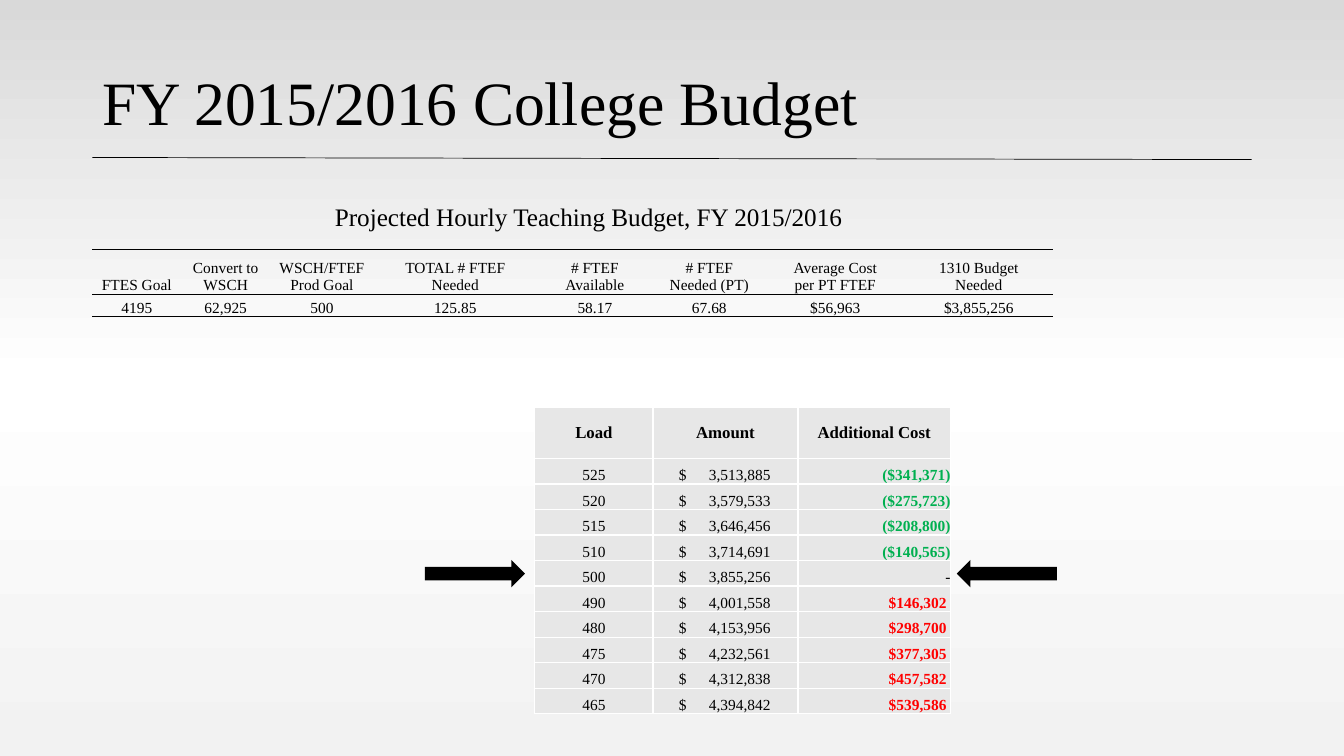
from lxml import etree
from pptx import Presentation
from pptx.dml.color import RGBColor
from pptx.enum.shapes import MSO_CONNECTOR, MSO_SHAPE
from pptx.enum.text import MSO_ANCHOR as ANCHOR, PP_ALIGN as ALIGN
from pptx.oxml.ns import qn
from pptx.util import Pt

FONT = "Times New Roman"
COLORS = {"ink": "000000", "cell": "E7E7E7", "grid": "FFFFFF",
          "saving": "00B050", "increase": "FF0000"}
BACKGROUND_STOPS = {0: "D9D9D9", 50: "FFFFFF", 100: "F2F2F2"}
NO_STYLE = "{2D5ABB26-0587-4C30-8999-92F81FD0307C}"

PROJECTION = {
    "FTES Goal": "4195", "Convert to WSCH": "62,925", "WSCH/FTEF\nProd Goal": "500",
    "TOTAL # FTEF\nNeeded": "125.85", "# FTEF\nAvailable": "58.17",
    "# FTEF\nNeeded (PT)": "67.68", "Average Cost\nper PT FTEF": "$56,963",
    "1310 Budget\nNeeded": "$3,855,256"}
PROJECTION_WIDTHS = [63.5, 63.5, 74, 116.5, 83, 80.5, 99.5, 105.5]

BASE_LOAD = 500
AMOUNTS = {525: 3513885, 520: 3579533, 515: 3646456, 510: 3714691, 500: 3855256,
           490: 4001558, 480: 4153956, 475: 4232561, 470: 4312838, 465: 4394842}
LOAD_HEADINGS = ["Load", "Amount", "Additional Cost"]
LOAD_WIDTHS = [84.5, 103.5, 109]
DOLLAR_INDENT, AMOUNT_TAB = 18.5, 65.5


def rgb(name):
    return RGBColor.from_string(COLORS[name])


def write(frame, text, size, align=ALIGN.CENTER, color="ink", bold=False):
    frame.text = text
    for paragraph in frame.paragraphs:
        paragraph.alignment = align
        for run in paragraph.runs:
            run.font.color.rgb = rgb(color)
            for name, value in {"name": FONT, "size": Pt(size), "bold": bold}.items():
                setattr(run.font, name, value)


def add_borders(cell, sides, color):
    properties = cell._tc.get_or_add_tcPr()
    for side in sides:
        line = etree.SubElement(properties, qn(f"a:ln{side}"), w=str(Pt(1)))
        fill = etree.SubElement(line, qn("a:solidFill"))
        etree.SubElement(fill, qn("a:srgbClr"), val=COLORS[color])


def add_plain_table(slide, left, top, widths, heights):
    """Add a table without style, cell margins or fills."""
    frame = slide.shapes.add_table(len(heights), len(widths), Pt(left), Pt(top),
                                   Pt(sum(widths)), Pt(sum(heights)))
    table = frame.table
    next(frame.element.iter(qn("a:tableStyleId"))).text = NO_STYLE
    table.first_row = table.horz_banding = False
    for column, width in zip(table.columns, widths):
        column.width = Pt(width)
    for row, height in zip(table.rows, heights):
        row.height = Pt(height)
    for cell in table.iter_cells():
        cell.vertical_anchor = ANCHOR.BOTTOM
        for side in ("left", "right", "top", "bottom"):
            setattr(cell, f"margin_{side}", 0)
    return table


def paint_background(slide):
    fill = slide.background.fill
    fill.gradient()
    fill.gradient_angle = 270
    stops = next(slide.element.iter(qn("a:gsLst")))
    for stop in list(stops):
        stops.remove(stop)
    for percent, color in BACKGROUND_STOPS.items():
        stop = etree.SubElement(stops, qn("a:gs"), pos=str(percent * 1000))
        etree.SubElement(stop, qn("a:srgbClr"), val=color)


def add_heading(slide, left, top, width, height):
    title = slide.shapes.title
    box = {"left": left, "top": top, "width": width, "height": height}
    for name, value in box.items():
        setattr(title, name, Pt(value))
    write(title.text_frame, "FY 2015/2016 College Budget", 44, ALIGN.LEFT)
    title.text_frame.vertical_anchor = ANCHOR.MIDDLE
    title.text_frame.paragraphs[0].line_spacing = 0.9

    rule_top = top + 83.5
    rule = slide.shapes.add_connector(MSO_CONNECTOR.STRAIGHT, Pt(left), Pt(rule_top),
                                      Pt(left + width), Pt(rule_top + 1.5))
    rule.line.color.rgb = rgb("ink")
    rule.line.width = Pt(0.5)
    etree.SubElement(rule.element.spPr, qn("a:effectLst"))


def add_projection(slide, left, top):
    caption = slide.shapes.add_textbox(Pt(left + 74), Pt(top), Pt(561), Pt(29))
    caption.text_frame.word_wrap = True
    write(caption.text_frame, "Projected Hourly Teaching Budget, FY 2015/2016", 18)

    table = add_plain_table(slide, left, top + 37.5, PROJECTION_WIDTHS, [32.2, 16])
    for column, texts in enumerate(PROJECTION.items()):
        for row, text in enumerate(texts):
            cell = table.cell(row, column)
            write(cell.text_frame, text, 11)
            add_borders(cell, "TB", "ink")


def write_amount(cell, amount):
    """Set the dollar sign left and the figure on a right tab."""
    cell.margin_left = Pt(DOLLAR_INDENT)
    write(cell.text_frame, f"$\t{amount:,}", 11, ALIGN.LEFT)
    properties = cell.text_frame.paragraphs[0]._p.get_or_add_pPr()
    tabs = etree.SubElement(properties, qn("a:tabLst"))
    etree.SubElement(tabs, qn("a:tab"), pos=str(Pt(AMOUNT_TAB)), algn="r")


def write_cost(cell, cost):
    text, color = "-", "ink"
    if cost < 0:
        text, color = f"(${-cost:,})", "saving"
    elif cost > 0:
        text, color = f"${cost:,} ", "increase"
    write(cell.text_frame, text, 11, ALIGN.RIGHT, color, bold=cost != 0)


def add_load_table(slide, left, top):
    row_height = 18.25
    heights = [2 * row_height] + [row_height] * len(AMOUNTS)
    table = add_plain_table(slide, left, top, LOAD_WIDTHS, heights)
    for cell in table.iter_cells():
        add_borders(cell, "LRTB", "grid")
        cell.fill.solid()
        cell.fill.fore_color.rgb = rgb("cell")
    for column, heading in enumerate(LOAD_HEADINGS):
        cell = table.cell(0, column)
        cell.vertical_anchor = ANCHOR.MIDDLE
        write(cell.text_frame, heading, 12, bold=True)
    for row, (load, amount) in enumerate(AMOUNTS.items(), 1):
        write(table.cell(row, 0).text_frame, str(load), 11)
        write_amount(table.cell(row, 1), amount)
        write_cost(table.cell(row, 2), amount - AMOUNTS[BASE_LOAD])

    base_row = list(AMOUNTS).index(BASE_LOAD) + 1
    arrow_top = top + sum(heights[:base_row]) - 0.5
    arrow_width, gap = 71.5, 4.5
    arrows = {left + sum(LOAD_WIDTHS) + gap: 0, left - 7 - arrow_width: 180}
    for arrow_left, rotation in arrows.items():
        arrow = slide.shapes.add_shape(MSO_SHAPE.LEFT_ARROW, Pt(arrow_left),
                                       Pt(arrow_top), Pt(arrow_width), Pt(19.5))
        arrow.rotation = rotation
        arrow.shadow.inherit = False
        arrow.fill.solid()
        arrow.fill.fore_color.rgb = rgb("ink")
        arrow.line.fill.background()


def main():
    presentation = Presentation()
    presentation.slide_width, presentation.slide_height = Pt(960), Pt(540)
    slide = presentation.slides.add_slide(presentation.slide_layouts[5])
    paint_background(slide)
    add_heading(slide, 66, 29, 828, 93)
    add_projection(slide, 66, 140.5)
    add_load_table(slide, 382, 291)
    presentation.save("out.pptx")


if __name__ == "__main__":
    main()
